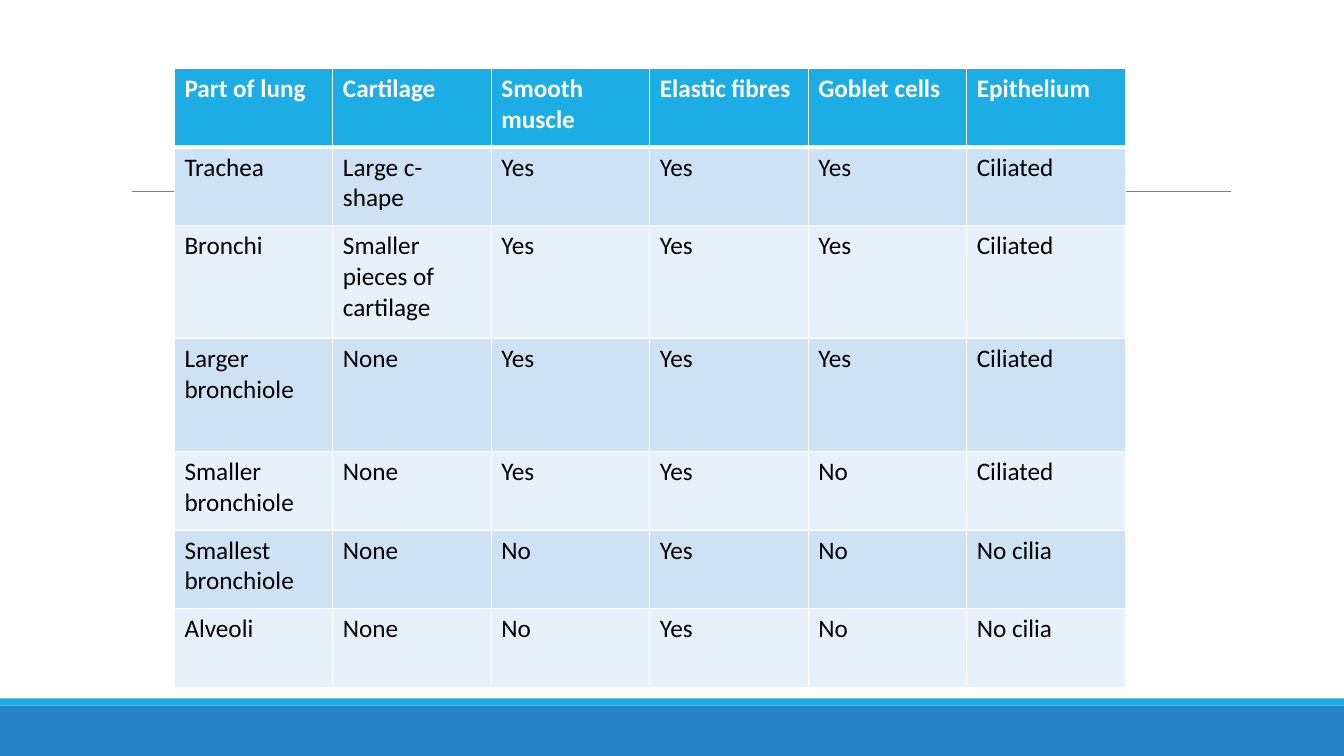
import pptx
import pptx.util
import pptx.dml.color
import pptx.enum.shapes
import pptx.oxml
import pptx.oxml.ns
import lxml.etree

Inches = pptx.util.Inches
Pt = pptx.util.Pt

ROWS = [
    ["Part of lung", "Cartilage", "Smooth muscle", "Elastic fibres", "Goblet cells", "Epithelium"],
    ["Trachea", "Large c-shape", "Yes", "Yes", "Yes", "Ciliated"],
    ["Bronchi", "Smaller pieces of cartilage", "Yes", "Yes", "Yes", "Ciliated"],
    ["Larger bronchiole", "None", "Yes", "Yes", "Yes", "Ciliated"],
    ["Smaller bronchiole", "None", "Yes", "Yes", "No", "Ciliated"],
    ["Smallest bronchiole", "None", "No", "Yes", "No", "No cilia"],
    ["Alveoli", "None", "No", "Yes", "No", "No cilia"],
]
HEIGHTS = [0.78, 0.78, 1.12, 1.12, 0.78, 0.78, 0.78]
BANDS = ["E8F1FA", "CDE3F5"]


def paint(color, code):
    color.rgb = pptx.dml.color.RGBColor.from_string(code)


def add_band(slide, left, top, width, height, code):
    kind = pptx.enum.shapes.MSO_SHAPE.RECTANGLE
    band = slide.shapes.add_shape(kind, Inches(left), Inches(top), Inches(width), Inches(height))
    band.shadow.inherit = False
    band.fill.solid()
    paint(band.fill.fore_color, code)
    band.line.fill.background()


def add_footer(slide, left, top, width, height):
    strip = 0.07
    add_band(slide, left, top + strip, width, height - strip, "2683C6")
    add_band(slide, left, top, width, strip, "1CADE4")


def add_rule(slide, left, top, width):
    kind = pptx.enum.shapes.MSO_CONNECTOR.STRAIGHT
    rule = slide.shapes.add_connector(kind, Inches(left), Inches(top), Inches(left + width), Inches(top))
    paint(rule.line.color, "808080")
    rule.line.width = Pt(0.5)
    lxml.etree.SubElement(rule._element.spPr, pptx.oxml.ns.qn("a:effectLst"))


def add_edges(cell, bottom, top):
    props = cell._tc.get_or_add_tcPr()
    widths = {"lnL": 1, "lnR": 1, "lnT": top, "lnB": bottom}
    for place, (side, width) in enumerate(widths.items()):
        edge = pptx.oxml.parse_xml(
            f'<a:{side} {pptx.oxml.ns.nsdecls("a")} w="{Pt(width)}"><a:solidFill>'
            f'<a:srgbClr val="FFFFFF"/></a:solidFill></a:{side}>')
        props.insert(place, edge)


def fill_cell(cell, text, row):
    head = row == 0
    cell.text = text
    font = cell.text_frame.paragraphs[0].font
    font.name = "Calibri"
    font.size = Pt(18)
    font.bold = head
    paint(font.color, "FFFFFF" if head else "000000")
    cell.fill.solid()
    paint(cell.fill.fore_color, "1CADE4" if head else BANDS[row % 2])
    add_edges(cell, 3 if head else 1, 3 if row == 1 else 1)


def add_grid(slide, left, top, width):
    count = len(ROWS[0])
    frame = slide.shapes.add_table(
        len(ROWS), count, Inches(left), Inches(top), Inches(width), Inches(sum(HEIGHTS)))
    table = frame.table
    for column in table.columns:
        column.width = Inches(width / count)
    for row, texts in enumerate(ROWS):
        table.rows[row].height = Inches(HEIGHTS[row])
        for col, text in enumerate(texts):
            fill_cell(table.cell(row, col), text, row)


def main():
    deck = pptx.Presentation()
    deck.slide_width = Inches(13.33)
    deck.slide_height = Inches(7.5)
    slide = deck.slides.add_slide(deck.slide_layouts[6])
    add_footer(slide, 0, 6.93, 13.33, 0.57)
    add_rule(slide, 1.31, 1.9, 10.9)
    add_grid(slide, 1.73, 0.68, 9.43)
    deck.save("out.pptx")


if __name__ == "__main__":
    main()
